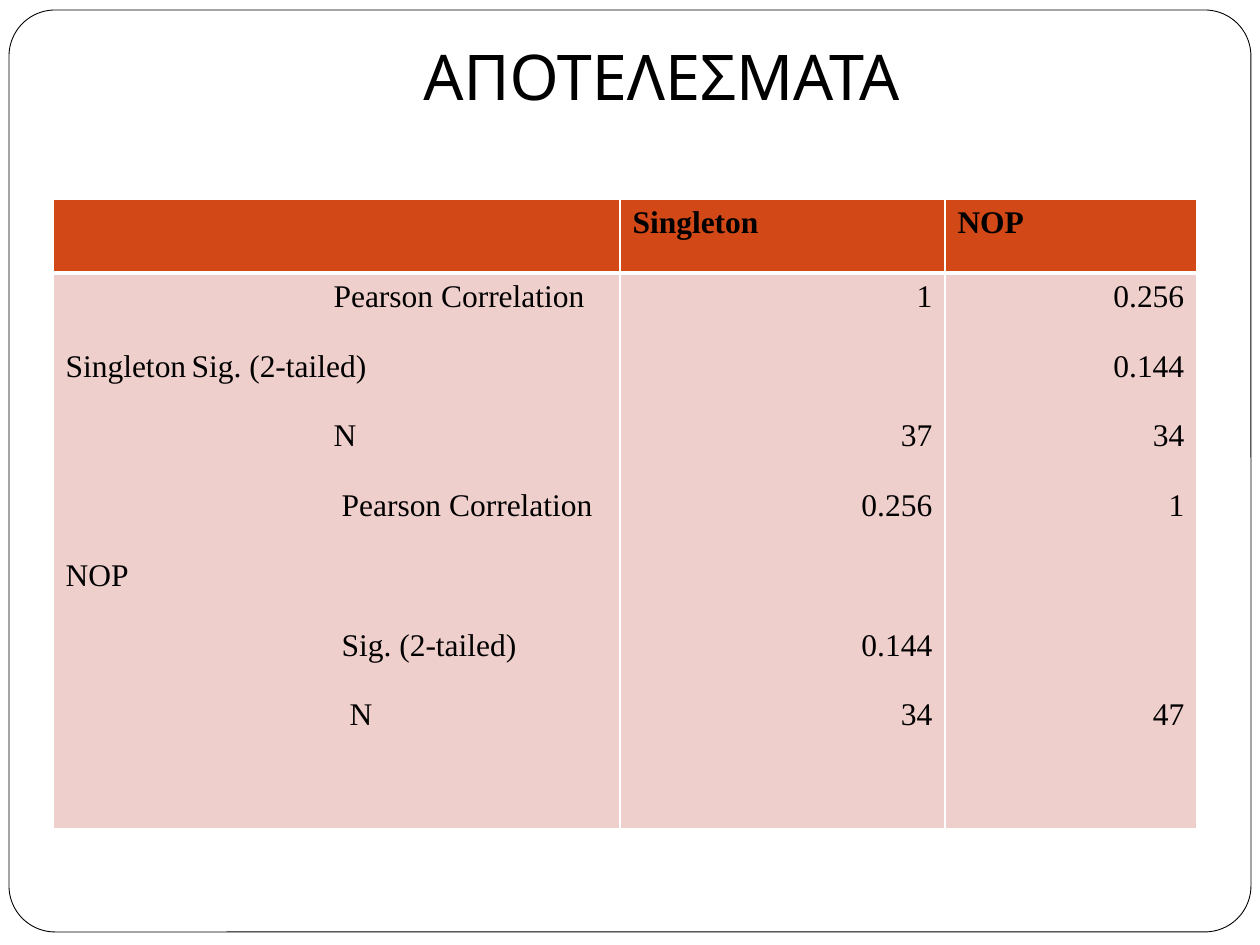
from lxml import etree
from pptx import Presentation
from pptx.dml.color import RGBColor
from pptx.enum.shapes import MSO_SHAPE
from pptx.enum.text import MSO_ANCHOR, MSO_AUTO_SIZE, PP_ALIGN
from pptx.oxml.ns import qn
from pptx.util import Pt

PX = 914400 // 126
ROUNDED = MSO_SHAPE.ROUNDED_RECTANGLE
BOTTOM = MSO_ANCHOR.BOTTOM
NO_AUTOFIT = MSO_AUTO_SIZE.NONE
LEFT, CENTER, RIGHT = PP_ALIGN.LEFT, PP_ALIGN.CENTER, PP_ALIGN.RIGHT

BODY_FONT = "Times New Roman"
LINE_GAP = 19.92      # points, one text line at 18 pt
LABEL_TAB = 247       # px from the cell's text edge

# Table wording: (line number, text, left indent in px)
LABELS = [
    (0, "Pearson Correlation", 268),
    (1, "Singleton\tSig. (2-tailed)", 0),
    (2, "Ν", 268),
    (3, "Pearson Correlation", 276),
    (4, "NOP", 0),
    (5, "Sig. (2-tailed)", 276),
    (6, "Ν", 284),
]
SINGLETON = [(0, "1", 0), (2, "37", 0), (3, "0.256", 0),
             (5, "0.144", 0), (6, "34", 0)]
NOP = [(0, "0.256", 0), (1, "0.144", 0), (2, "34", 0),
       (3, "1", 0), (6, "47", 0)]


def px(length):
    return length * PX


def color(value):
    return RGBColor.from_string(value)


def style(para, font, size, bold=False):
    for span in para.runs:
        span.font.name = font
        span.font.size = Pt(size)
        span.font.bold = bold
        span.font.color.rgb = color("000000")


def add_frame(page):
    frame = page.shapes.add_shape(ROUNDED, px(9), px(10), px(1242), px(922))
    frame.adjustments[0] = 0.05
    frame.shadow.inherit = False
    frame.fill.solid()
    frame.fill.fore_color.rgb = color("FFFFFF")
    frame.line.color.rgb = color("000000")
    frame.line.width = Pt(0.5)


def set_title(page, text):
    title = page.shapes.title
    title.left, title.top = px(126), px(38)
    title.width, title.height = px(1071), px(157)
    frame = title.text_frame
    frame.text = text
    frame.word_wrap = True
    frame.auto_size = NO_AUTOFIT
    frame.vertical_anchor = BOTTOM
    frame.margin_top, frame.margin_bottom = 0, px(82)
    para = frame.paragraphs[0]
    para.alignment = CENTER
    para.line_spacing = 0.85
    style(para, "Karla", 36)


def set_borders(cell, bottom=1):
    props = cell._tc.get_or_add_tcPr()
    widths = {"a:lnL": 1, "a:lnR": 1, "a:lnT": 1, "a:lnB": bottom}
    # Borders come before the fill in the cell properties
    for index, (tag, width) in enumerate(widths.items()):
        line = etree.Element(qn(tag), w=str(Pt(width)))
        fill = etree.SubElement(line, qn("a:solidFill"))
        etree.SubElement(fill, qn("a:srgbClr"), val="FFFFFF")
        props.insert(index, line)


def set_fill(cell, value):
    cell.fill.solid()
    cell.fill.fore_color.rgb = color(value)


def set_indent(para, indent):
    props = para._p.get_or_add_pPr()
    props.set("marL", str(px(indent)))
    props.set("indent", "0")


def add_tab(para, position):
    tabs = etree.SubElement(para._p.get_or_add_pPr(), qn("a:tabLst"))
    etree.SubElement(tabs, qn("a:tab"), pos=str(px(position)), algn="l")


def fill_lines(cell, lines, align):
    """Place each entry on its numbered line by the space before it."""
    frame = cell.text_frame
    previous = 0
    for index, (number, text, indent) in enumerate(lines):
        para = frame.add_paragraph() if index else frame.paragraphs[0]
        para.text = text
        para.alignment = align
        set_indent(para, indent)
        if index:
            steps = number - previous
            para.space_before = Pt(LINE_GAP * (2 * steps - 1))
        if "\t" in text:
            add_tab(para, LABEL_TAB)
        style(para, BODY_FONT, 18)
        previous = number


def add_results(page):
    table = page.shapes.add_table(
        2, 3, px(53), px(199), px(1144), px(630)).table
    for column, width in zip(table.columns, (567, 325, 252)):
        column.width = px(width)
    for row, height in zip(table.rows, (74, 556)):
        row.height = px(height)

    # Header row
    for index, text in enumerate(("", "Singleton", "NOP")):
        cell = table.cell(0, index)
        cell.text_frame.text = text
        style(cell.text_frame.paragraphs[0], BODY_FONT, 18, bold=True)
        set_fill(cell, "D34817")
        set_borders(cell, bottom=3)

    # Body row
    for index, lines in enumerate((LABELS, SINGLETON, NOP)):
        cell = table.cell(1, index)
        fill_lines(cell, lines, RIGHT if index else LEFT)
        set_fill(cell, "EFCFCC")
        set_borders(cell)
        if index == 0:
            cell.margin_right = 0

    # The line under the header is shared by both rows
    for cell in table.rows[1].cells:
        cell._tc.tcPr.find(qn("a:lnT")).set("w", str(Pt(3)))


def main():
    deck = Presentation()
    deck.slide_width, deck.slide_height = px(1260), px(945)
    page = deck.slides.add_slide(deck.slide_layouts[5])
    add_frame(page)
    # Keep the title in front of the frame
    title = page.shapes.title._element
    title.getparent().append(title)
    set_title(page, "ΑΠΟΤΕΛΕΣΜΑΤΑ")
    add_results(page)
    deck.save("out.pptx")


if __name__ == "__main__":
    main()
